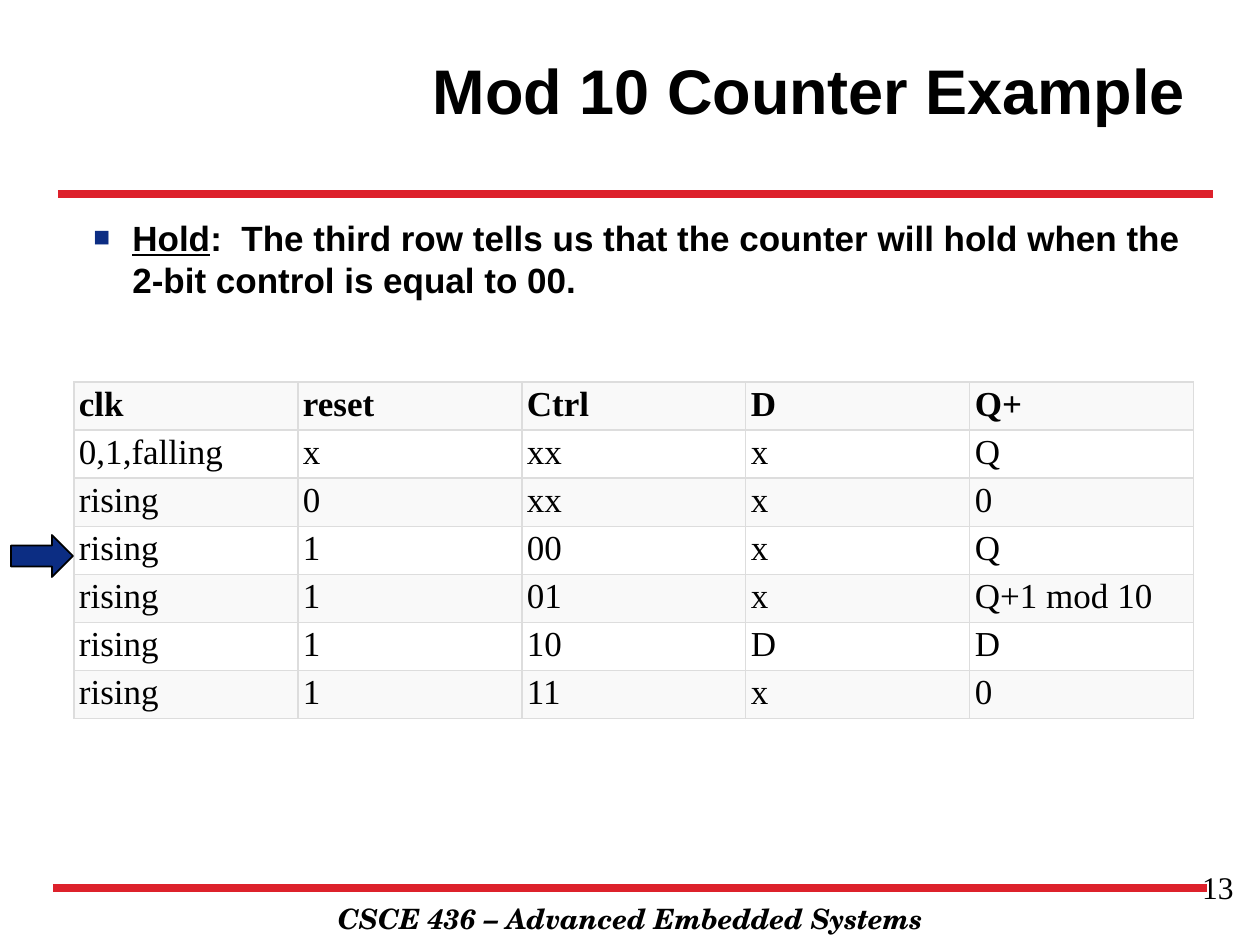
from collections import namedtuple

from lxml.etree import SubElement
from pptx import Presentation
from pptx.dml.color import RGBColor
from pptx.enum.shapes import MSO_CONNECTOR as Connector, MSO_SHAPE as Preset
from pptx.enum.text import MSO_ANCHOR as Anchor, PP_ALIGN as Align
from pptx.oxml.ns import qn
from pptx.util import Emu, Pt

Box = namedtuple("Box", "left top width height")
COLORS = {
    "text": "000000",
    "rule": "DD212B",
    "accent": "0C2D83",
    "border": "DDDDDD",
    "shaded": "F9F9F9",
    "plain": "FFFFFF",
}
ROWS = [
    ["clk", "reset", "Ctrl", "D", "Q+"],
    ["0,1,falling", "x", "xx", "x", "Q"],
    ["rising", "0", "xx", "x", "0"],
    ["rising", "1", "00", "x", "Q"],
    ["rising", "1", "01", "x", "Q+1 mod 10"],
    ["rising", "1", "10", "D", "D"],
    ["rising", "1", "11", "x", "0"],
]


def px(length):
    return Emu(round(length * 914400 / 126))


def place(box):
    return [px(length) for length in box]


def color(name):
    return RGBColor.from_string(COLORS[name])


def style_font(para, family, size, bold=False, italic=False):
    font = para.font
    font.name = family
    font.size = Pt(size)
    font.bold = bold
    font.italic = italic
    font.color.rgb = color("text")


def add_text(page, box, text, align, anchor=Anchor.TOP):
    frame = page.shapes.add_textbox(*place(box)).text_frame
    frame.word_wrap = True
    frame.vertical_anchor = anchor
    para = frame.paragraphs[0]
    para.text = text
    para.alignment = align
    return para


def add_rule(page, left, top, width):
    rule = page.shapes.add_connector(
        Connector.STRAIGHT, px(left), px(top), px(left + width), px(top)
    )
    rule.line.color.rgb = color("rule")
    rule.line.width = Pt(4.5)
    SubElement(rule._element.spPr, qn("a:effectLst"))


def add_header(page, box):
    title = Box(box.left + 205, box.top, 935, 158)
    para = add_text(page, title, "Mod 10 Counter Example", Align.RIGHT, Anchor.MIDDLE)
    style_font(para, "Arial", 36, bold=True)
    add_rule(page, box.left, box.top + box.height, box.width)


def add_bullet(para, indent):
    props = para._p.get_or_add_pPr()
    props.set("marL", str(px(indent)))
    props.set("indent", str(-px(indent)))
    tint = SubElement(props, qn("a:buClr"))
    SubElement(tint, qn("a:srgbClr"), val=COLORS["accent"])
    SubElement(props, qn("a:buSzPct"), val="80000")
    SubElement(props, qn("a:buFont"), typeface="Arial")
    SubElement(props, qn("a:buChar"), char="■")


def add_body(page, box):
    para = add_text(page, box, "", Align.LEFT)
    add_bullet(para, 39)
    style_font(para, "Arial", 20, bold=True)
    term = para.add_run()
    term.text = "Hold"
    term.font.underline = True
    span = para.add_run()
    span.text = (
        ":  The third row tells us that the counter will hold "
        "when the 2-bit control is equal to 00."
    )


def add_borders(cell):
    props = cell._tc.get_or_add_tcPr()
    for side in ("lnL", "lnR", "lnT", "lnB"):
        edge = SubElement(props, qn(f"a:{side}"), w=str(Pt(0.75)))
        fill = SubElement(edge, qn("a:solidFill"))
        SubElement(fill, qn("a:srgbClr"), val=COLORS["border"])


def add_truth_table(page, box):
    table = page.shapes.add_table(len(ROWS), len(ROWS[0]), *place(box)).table
    table.horz_banding = False
    for row_index, values in enumerate(ROWS):
        for column_index, value in enumerate(values):
            cell = table.cell(row_index, column_index)
            add_borders(cell)
            cell.fill.solid()
            cell.fill.fore_color.rgb = color("plain" if row_index % 2 else "shaded")
            cell.margin_left = cell.margin_right = px(5)
            cell.margin_top = cell.margin_bottom = px(3)
            para = cell.text_frame.paragraphs[0]
            para.text = value
            style_font(para, "Times New Roman", 20, bold=row_index == 0)


def add_row_arrow(page, box):
    arrow = page.shapes.add_shape(Preset.RIGHT_ARROW, *place(box))
    arrow.shadow.inherit = False
    arrow.fill.solid()
    arrow.fill.fore_color.rgb = color("accent")
    arrow.line.color.rgb = color("text")
    arrow.line.width = Pt(1)


def add_footer(page, box):
    add_rule(page, box.left, box.top, box.width)
    course = Box(box.left + 126, box.top + 7, 903, 47)
    para = add_text(page, course, "CSCE 436 – Advanced Embedded Systems", Align.CENTER)
    style_font(para, "TeX Gyre Schola", 16, bold=True, italic=True)
    number = Box(box.left + 900, box.top - 26, 293, 66)
    para = add_text(page, number, "13", Align.RIGHT)
    style_font(para, "Times New Roman", 18)


def main():
    deck = Presentation()
    deck.slide_width, deck.slide_height = px(1260), px(945)
    page = deck.slides.add_slide(deck.slide_layouts[6])
    add_header(page, Box(58, 10, 1155, 184))
    add_body(page, Box(81, 210, 1120, 596))
    add_truth_table(page, Box(74, 382, 1120, 327))
    add_row_arrow(page, Box(11, 535, 62, 42))
    add_footer(page, Box(53, 888, 1154, 54))
    deck.save("out.pptx")


if __name__ == "__main__":
    main()
